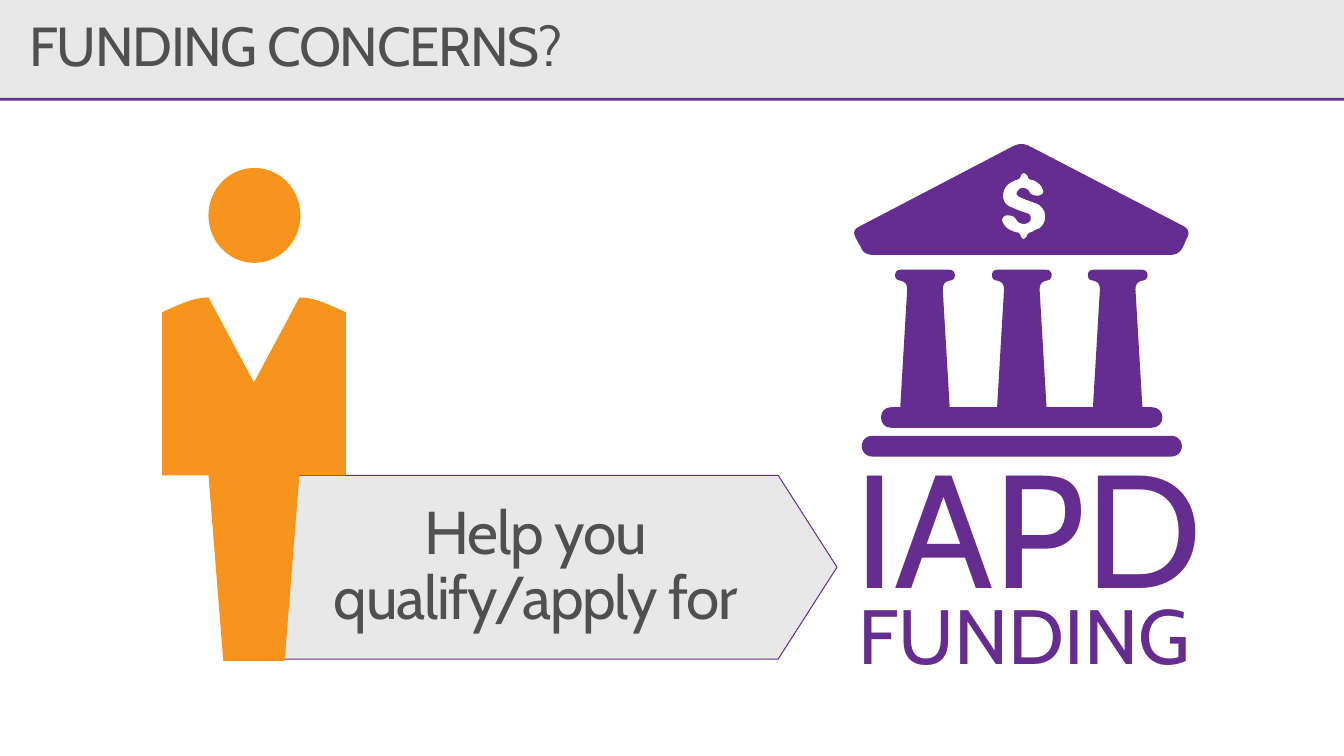
from pptx import Presentation
from pptx.dml.color import RGBColor
from pptx.enum.shapes import MSO_SHAPE
from pptx.enum.text import MSO_ANCHOR, PP_ALIGN
from pptx.util import Inches, Pt

GREY = RGBColor(0xE8, 0xE8, 0xE8)
PURPLE = RGBColor(0x66, 0x2D, 0x91)
ORANGE = RGBColor(0xF7, 0x94, 0x1D)
TEXT_GREY = RGBColor(0x50, 0x50, 0x50)
RECT, OVAL = MSO_SHAPE.RECTANGLE, MSO_SHAPE.OVAL
ROUNDED, PENTAGON = MSO_SHAPE.ROUNDED_RECTANGLE, MSO_SHAPE.PENTAGON
MIDDLE, LEFT, CENTER = MSO_ANCHOR.MIDDLE, PP_ALIGN.LEFT, PP_ALIGN.CENTER
FONT = "Cabin"
SLIDE_W, SLIDE_H, HEADER_H = 13.6, 7.65, 0.99

TITLE = "FUNDING CONCERNS?"
OFFER = "Help you \vqualify/apply for "
BANK_LABELS = [  # text, left, top, size
    ("IAPD", 8.5, 5.07, 117),
    ("FUNDING", 8.46, 6.11, 56),
]
LABEL_SIZE = (3.81, 0.72)

# Outlines: two numbers are a corner, six are a Bezier curve (two controls, end).
BODY = [
    (3.03, 3.01), (2.57, 3.87), (2.11, 3.01),
    (1.95, 3.01, 1.8, 3.09, 1.64, 3.16),
    (1.64, 4.81), (2.11, 4.81), (2.26, 6.69), (2.88, 6.69),
    (3.03, 4.81), (3.5, 4.81), (3.5, 3.16),
    (3.34, 3.09, 3.19, 3.01, 3.03, 3.01),
]
ROOF = [
    (11.96, 2.28), (10.42, 1.48),
    (10.36, 1.45, 10.31, 1.45, 10.25, 1.48), (8.7, 2.29),
    (8.64, 2.32, 8.63, 2.35, 8.66, 2.41), (8.71, 2.5),
    (8.73, 2.56, 8.78, 2.58, 8.84, 2.58), (11.83, 2.58),
    (11.9, 2.58, 11.94, 2.56, 11.97, 2.5), (12.01, 2.41),
    (12.04, 2.36, 12.03, 2.32, 11.98, 2.29),
]
DOLLAR = [
    (10.52, 2.31), (10.49, 2.32, 10.47, 2.33, 10.44, 2.35),
    (10.42, 2.35, 10.4, 2.36, 10.39, 2.39),
    (10.39, 2.4, 10.37, 2.41, 10.36, 2.42),
    (10.35, 2.42, 10.33, 2.4, 10.33, 2.39),
    (10.32, 2.36, 10.3, 2.35, 10.28, 2.35),
    (10.21, 2.33, 10.16, 2.3, 10.14, 2.23),
    (10.14, 2.21, 10.15, 2.19, 10.18, 2.18),
    (10.24, 2.18, 10.26, 2.18, 10.29, 2.23),
    (10.31, 2.27, 10.39, 2.28, 10.42, 2.24),
    (10.44, 2.21, 10.43, 2.17, 10.4, 2.16), (10.31, 2.13), (10.24, 2.1),
    (10.18, 2.08, 10.15, 2.04, 10.15, 1.98),
    (10.15, 1.92, 10.18, 1.87, 10.24, 1.84), (10.28, 1.82),
    (10.3, 1.82, 10.32, 1.81, 10.33, 1.78),
    (10.33, 1.77, 10.35, 1.75, 10.36, 1.75),
    (10.37, 1.75, 10.39, 1.77, 10.4, 1.78),
    (10.4, 1.81, 10.42, 1.82, 10.45, 1.82),
    (10.49, 1.84, 10.53, 1.86, 10.55, 1.91),
    (10.57, 1.95, 10.55, 1.97, 10.51, 1.98),
    (10.45, 1.98, 10.43, 1.97, 10.41, 1.93),
    (10.39, 1.9, 10.33, 1.89, 10.31, 1.92),
    (10.28, 1.95, 10.28, 1.97, 10.31, 1.99),
    (10.33, 2, 10.36, 2.01, 10.38, 2.02), (10.49, 2.06),
    (10.59, 2.1, 10.61, 2.24, 10.52, 2.31),
]
COLUMN_CENTERS = (9.36, 10.34, 11.31)
STEP_BAR = (8.72, 4.41, 3.24, 0.21)
CURVE_STEPS = 8


def style(shape, fill, line=None):
    shape.shadow.inherit = False
    shape.fill.solid()
    shape.fill.fore_color.rgb = fill
    if line is None:
        shape.line.fill.background()
    else:
        shape.line.color.rgb = line
        shape.line.width = Pt(0.75)
    return shape


def add_preset(shapes, kind, box, fill, line=None):
    return style(shapes.add_shape(kind, *map(Inches, box)), fill, line)


def flatten(outline):
    """Turn corners and curves into a list of points in EMU."""
    points = []
    for segment in outline:
        if len(segment) == 2:
            points.append(segment)
            continue
        x0, y0 = points[-1]
        x1, y1, x2, y2, x3, y3 = segment
        for step in range(1, CURVE_STEPS + 1):
            t = step / CURVE_STEPS
            a, b, c, d = (1 - t) ** 3, 3 * t * (1 - t) ** 2, 3 * t * t * (1 - t), t ** 3
            points.append((a * x0 + b * x1 + c * x2 + d * x3,
                           a * y0 + b * y1 + c * y2 + d * y3))
    return [(Inches(x), Inches(y)) for x, y in points]


def add_outline(shapes, fill, *outlines):
    """Add one freeform; outlines after the first are cut out of it."""
    first, *holes = map(flatten, outlines)
    builder = shapes.build_freeform(*first[0])
    builder.add_line_segments(first[1:])
    for hole in holes:
        builder.move_to(*hole[0])
        builder.add_line_segments(hole[1:])
    style(builder.convert_to_shape(), fill)


def column_outline(x):
    """Trace a column centred on x, from its left foot to its right foot."""
    return [
        (x - 0.25, 4.12), (x - 0.18, 2.93),
        (x - 0.18, 2.88, x - 0.2, 2.85, x - 0.25, 2.84),
        (x - 0.32, 2.84, x - 0.32, 2.73, x - 0.25, 2.73), (x + 0.25, 2.73),
        (x + 0.32, 2.73, x + 0.32, 2.84, x + 0.25, 2.84),
        (x + 0.2, 2.85, x + 0.18, 2.88, x + 0.18, 2.93), (x + 0.25, 4.12),
    ]


def colonnade_outline():
    """Trace the three columns and the rounded plinth under them."""
    outline = [(9.02, 4.12)]
    for x in COLUMN_CENTERS:
        outline += column_outline(x)
    return outline + [
        (11.65, 4.12), (11.8, 4.12, 11.8, 4.33, 11.65, 4.33),
        (9.02, 4.33), (8.88, 4.33, 8.88, 4.12, 9.02, 4.12),
    ]


def write(shape, text, size, color, align, spacing=0, margins=(0, 0), wrap=True):
    frame = shape.text_frame
    frame.text = text
    frame.word_wrap = wrap
    frame.vertical_anchor = MIDDLE
    frame.margin_left = frame.margin_right = Inches(margins[0])
    frame.margin_top = frame.margin_bottom = Inches(margins[1])
    paragraph = frame.paragraphs[0]
    paragraph.alignment = align
    paragraph.line_spacing = 0.9
    for run in paragraph.runs:
        run.font.name = FONT
        run.font.size = Pt(size)
        run.font.color.rgb = color
        run.font._element.set("spc", str(spacing * 100))


def add_person(slide):
    person = slide.shapes.add_group_shape().shapes
    add_preset(person, OVAL, (2.11, 1.7, 0.93, 0.96), ORANGE)
    add_outline(person, ORANGE, BODY)


def add_bank(slide):
    bank = slide.shapes.add_group_shape().shapes
    add_outline(bank, PURPLE, colonnade_outline())
    add_preset(bank, ROUNDED, STEP_BAR, PURPLE).adjustments[0] = 0.5
    add_outline(bank, PURPLE, ROOF, DOLLAR)
    for text, left, top, size in BANK_LABELS:
        label = bank.add_textbox(*map(Inches, (left, top, *LABEL_SIZE)))
        write(label, text, size, PURPLE, CENTER, wrap=False)


def add_title(slide):
    title = slide.shapes.title
    title.left, title.top, title.width, title.height = map(
        Inches, (0.3, 0, 10.83, HEADER_H))
    write(title, TITLE, 40, TEXT_GREY, LEFT, spacing=-1)
    slide.shapes._spTree.append(title._element)  # in front of the header band


def main():
    deck = Presentation()
    deck.slide_width, deck.slide_height = Inches(SLIDE_W), Inches(SLIDE_H)
    slide = deck.slides.add_slide(deck.slide_layouts[5])
    add_preset(slide.shapes, RECT, (0, 0, SLIDE_W, HEADER_H), GREY)
    add_preset(slide.shapes, RECT, (0, HEADER_H, SLIDE_W, 0.03), PURPLE)
    arrow = add_preset(slide.shapes, PENTAGON, (2.8, 4.81, 5.67, 1.86), GREY, PURPLE)
    arrow.adjustments[0] = 0.32
    write(arrow, OFFER, 44, TEXT_GREY, CENTER, spacing=-1, margins=(0.2, 0.16))
    add_person(slide)
    add_bank(slide)
    add_title(slide)
    deck.save("out.pptx")


if __name__ == "__main__":
    main()
